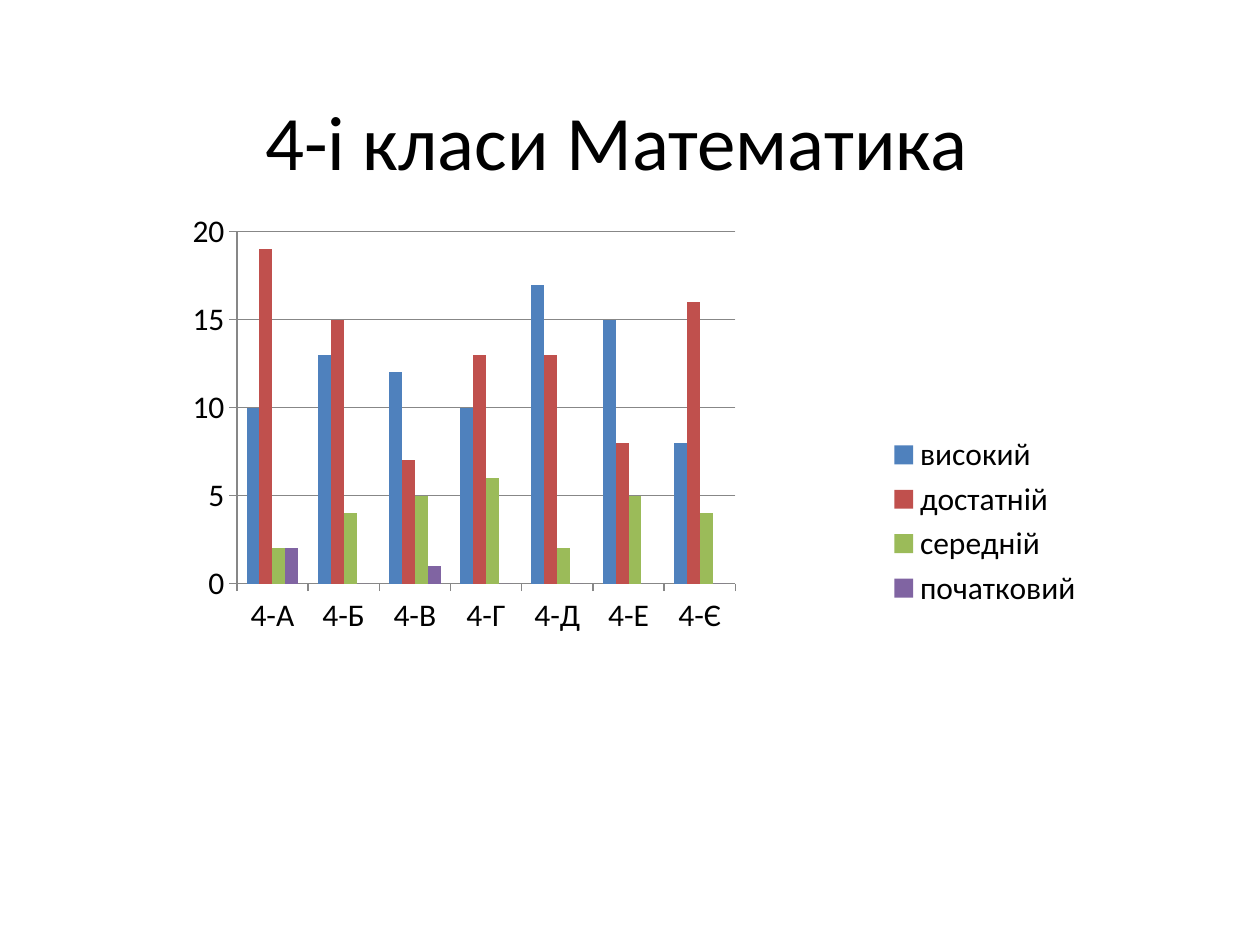
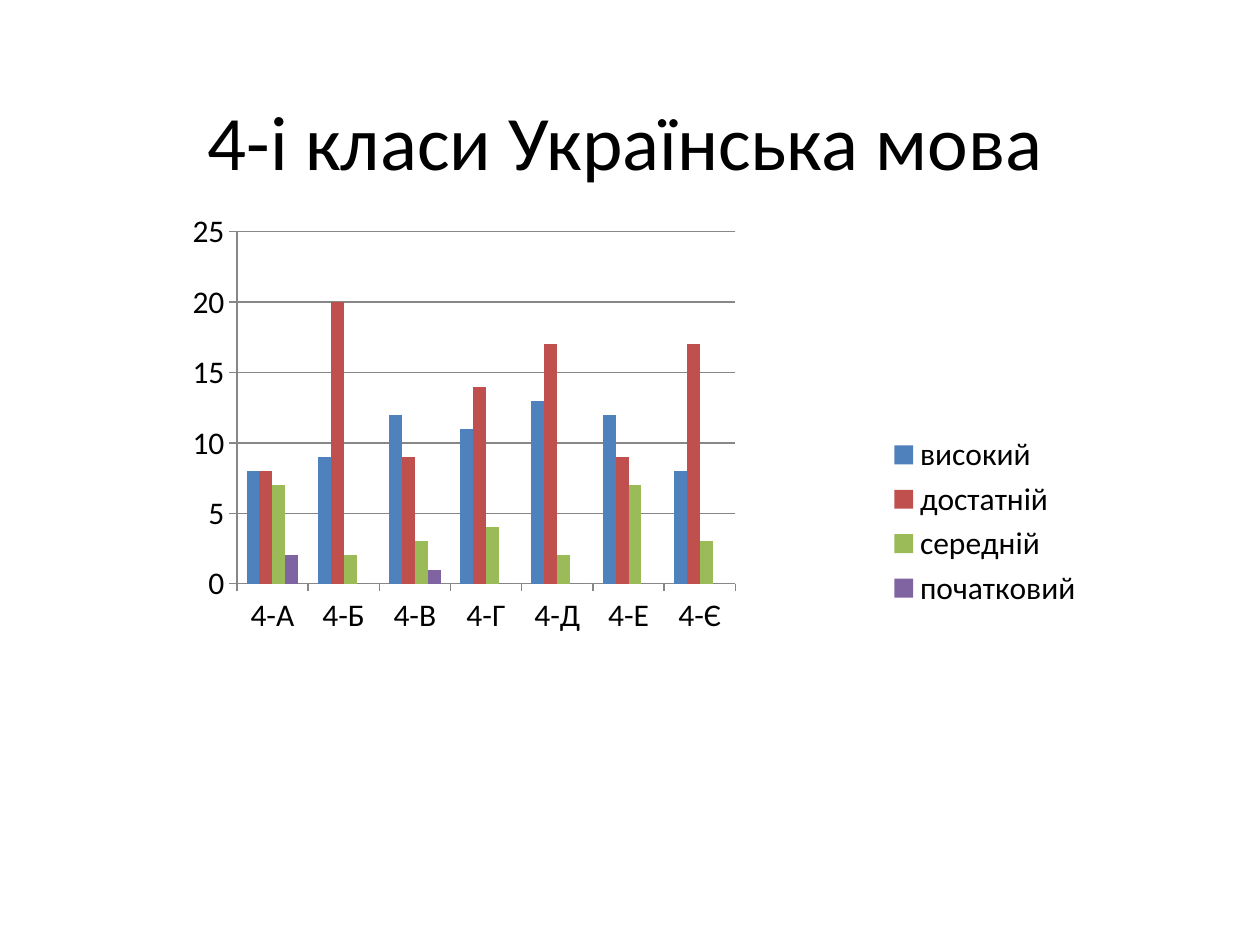
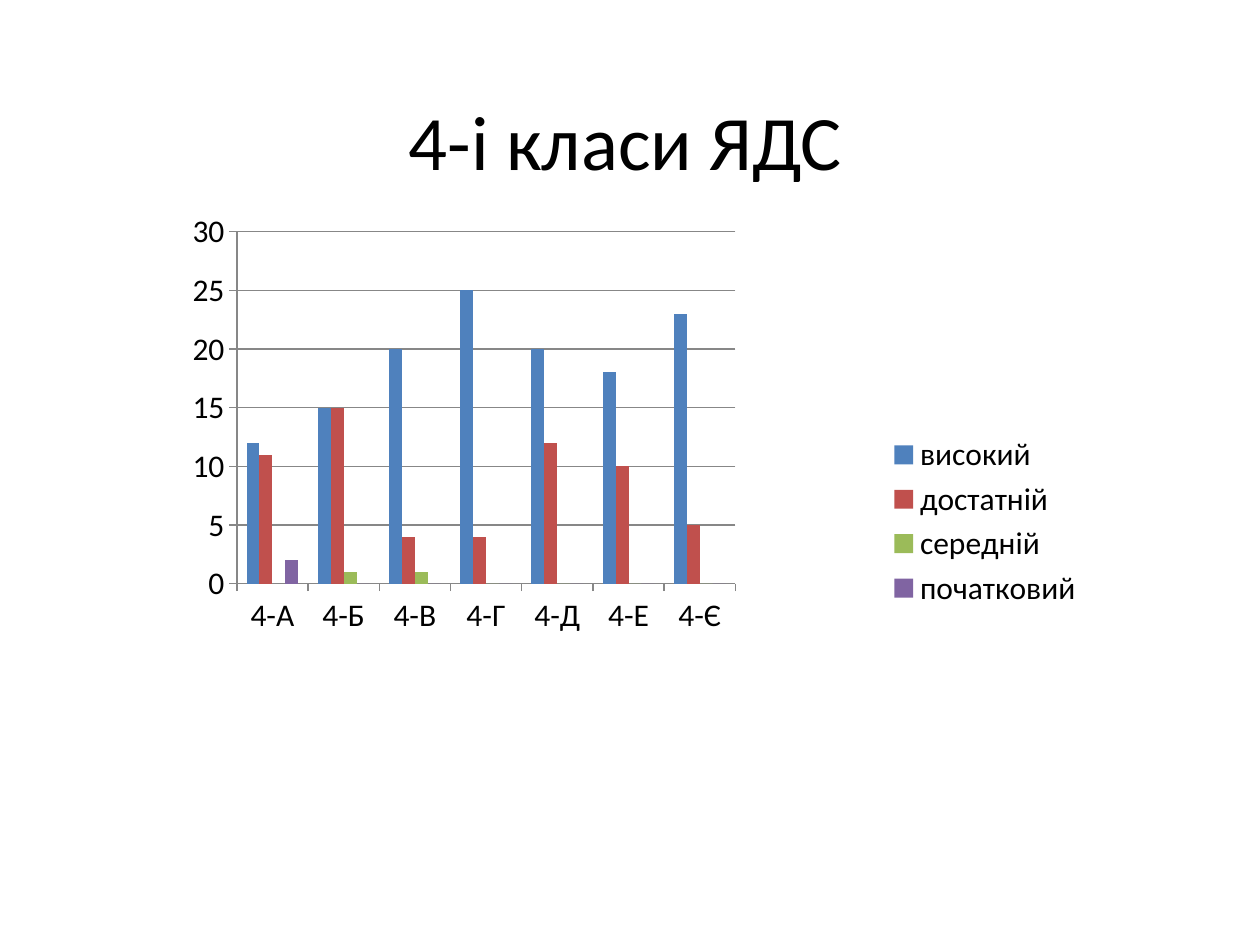
from lxml.etree import SubElement
from pptx import Presentation
from pptx.chart.data import CategoryChartData
from pptx.dml.color import RGBColor
from pptx.enum.chart import XL_CHART_TYPE, XL_LEGEND_POSITION, XL_TICK_MARK
from pptx.enum.text import MSO_ANCHOR, PP_ALIGN
from pptx.oxml.ns import qn
from pptx.util import Pt

COLORS = {
    "text": "000000",
    "axis": "878787",
    "високий": "4F81BD",
    "достатній": "C0504D",
    "середній": "9BBB59",
    "початковий": "8064A2",
}
LEVELS = ["високий", "достатній", "середній", "початковий"]
CLASSES = ["4-А", "4-Б", "4-В", "4-Г", "4-Д", "4-Е", "4-Є"]
SUBJECTS = [
    ("4-і класи Математика ", [
        [10, 13, 12, 10, 17, 15, 8],
        [19, 15, 7, 13, 13, 8, 16],
        [2, 4, 5, 6, 2, 5, 4],
        [2, 0, 1, 0, 0, None, 0],
    ]),
    ("4-і класи Українська мова", [
        [8, 9, 12, 11, 13, 12, 8],
        [8, 20, 9, 14, 17, 9, 17],
        [7, 2, 3, 4, 2, 7, 3],
        [2, 0, 1, 0, 0, None, None],
    ]),
    ("4-і класи ЯДС", [
        [12, 15, 20, 25, 20, 18, 23],
        [11, 15, 4, 4, 12, 10, 5],
        [None, 1, 1, 0, 0, 0, 0],
        [2, 0, 0, 0, 0, 0, 0],
    ]),
]

SLIDE_SIZE = (720, 540)
TITLE_BOX = (54, 37.5, 607, 85)
CHART_BOX = (76.5, 116.5, 550, 363)
PLOT_LAYOUT = {
    "layoutTarget": "inner",
    "xMode": "edge",
    "yMode": "edge",
    "x": 0.107,
    "y": 0.044,
    "w": 0.518,
    "h": 0.554,
}
FONT_NAME = "Calibri"


def color(name):
    return RGBColor.from_string(COLORS[name])


def set_values(target, **values):
    for name, value in values.items():
        setattr(target, name, value)


def style_font(font, size):
    set_values(font, name=FONT_NAME, size=Pt(size))
    font.color.rgb = color("text")


def add_title(page, text):
    title = page.shapes.title
    left, top, width, height = map(Pt, TITLE_BOX)
    set_values(title, left=left, top=top, width=width, height=height)
    set_values(title.text_frame, word_wrap=True, vertical_anchor=MSO_ANCHOR.MIDDLE)
    para = title.text_frame.paragraphs[0]
    para.alignment = PP_ALIGN.CENTER
    span = para.add_run()
    span.text = text
    style_font(span.font, 44)


def place_plot(chart):
    plot_area = chart.element.find(".//" + qn("c:plotArea"))
    for layout in plot_area.findall(qn("c:layout")):
        plot_area.remove(layout)
    layout = plot_area.makeelement(qn("c:layout"))
    plot_area.insert(0, layout)
    manual = SubElement(layout, qn("c:manualLayout"))
    for name, value in PLOT_LAYOUT.items():
        SubElement(manual, qn("c:" + name)).set("val", str(value))


def style_axis(axis):
    set_values(axis, major_tick_mark=XL_TICK_MARK.OUTSIDE,
               minor_tick_mark=XL_TICK_MARK.NONE)
    style_line(axis.format.line)


def style_line(line):
    line.color.rgb = color("axis")
    line.width = Pt(0.75)


def add_level_chart(page, results):
    data = CategoryChartData()
    data.categories = CLASSES
    for level, counts in zip(LEVELS, results):
        data.add_series(level, counts)
    chart = page.shapes.add_chart(
        XL_CHART_TYPE.COLUMN_CLUSTERED, *map(Pt, CHART_BOX), data).chart
    set_values(chart, has_title=False, has_legend=True)
    set_values(chart.legend, position=XL_LEGEND_POSITION.RIGHT, include_in_layout=False)
    style_font(chart.font, 18)

    set_values(chart.plots[0], gap_width=150, vary_by_categories=False)
    for series in chart.plots[0].series:
        series.format.fill.solid()
        series.format.fill.fore_color.rgb = color(series.name)

    for axis in (chart.category_axis, chart.value_axis):
        style_axis(axis)
    chart.value_axis.has_major_gridlines = True
    style_line(chart.value_axis.major_gridlines.format.line)
    place_plot(chart)


def main():
    deck = Presentation()
    deck.slide_width, deck.slide_height = map(Pt, SLIDE_SIZE)
    title_only = deck.slide_layouts[5]
    for heading, results in SUBJECTS:
        page = deck.slides.add_slide(title_only)
        add_title(page, heading)
        add_level_chart(page, results)
    deck.save("out.pptx")


if __name__ == "__main__":
    main()
